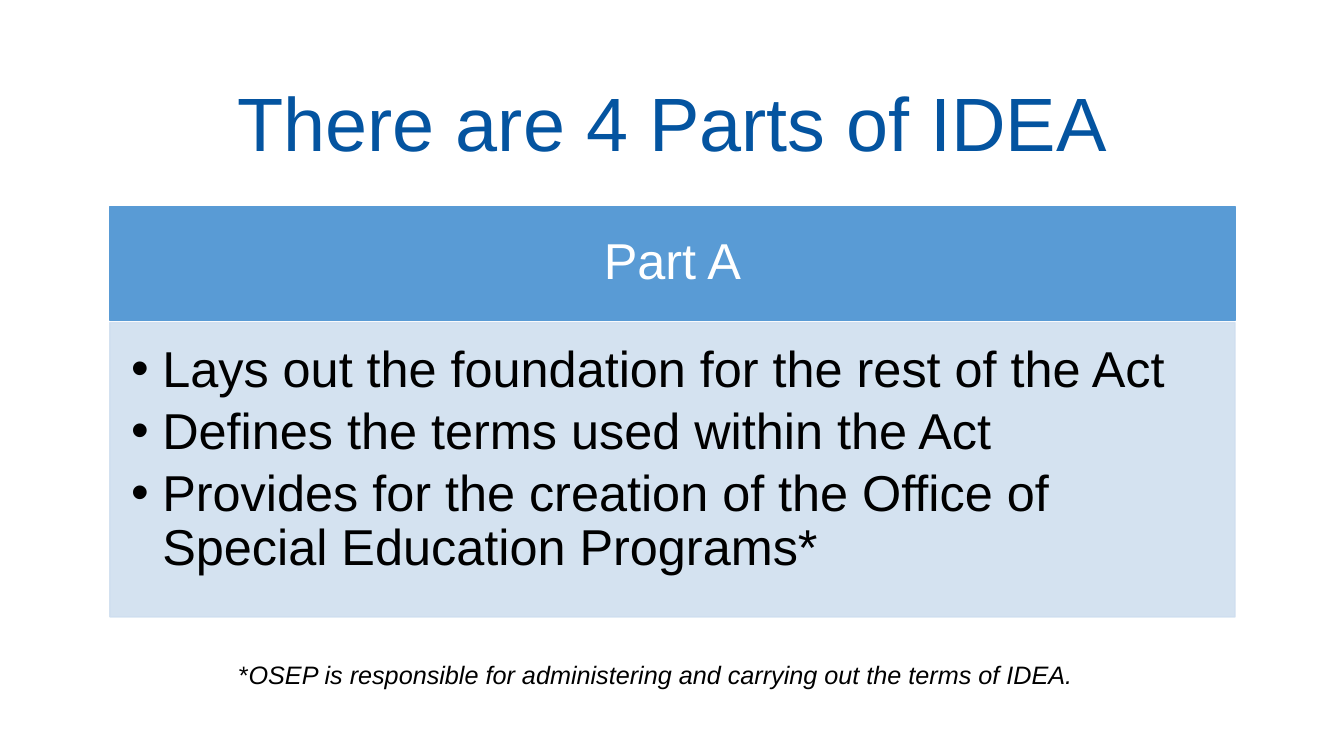
from lxml import etree
from pptx import Presentation
from pptx.dml.color import RGBColor
from pptx.enum import shapes, text
from pptx.oxml import ns
from pptx.util import Inches, Pt

TITLE_BLUE = RGBColor(0x04, 0x54, 0xA0)
HEADER_BLUE = RGBColor(0x59, 0x9B, 0xD5)
BODY_BLUE = RGBColor(0xCF, 0xDE, 0xEF)
WHITE = RGBColor(0xFF, 0xFF, 0xFF)
BLACK = RGBColor(0x00, 0x00, 0x00)

PANEL_LEFT, PANEL_WIDTH = 1.09, 11.16
DUTIES = [
    "Lays out the foundation for the rest of the Act",
    "Defines the terms used within the Act",
    "Provides for the creation of the Office of Special Education Programs*",
]


def style_run(r, size, color, italic=None):
    r.font.name = "Arial"
    r.font.size = Pt(size)
    r.font.color.rgb = color
    r.font.italic = italic


def set_frame(tf, anchor, insets=(0.1, 0.05, 0.1, 0.05)):
    tf.word_wrap = True
    tf.vertical_anchor = anchor
    tf.margin_left, tf.margin_top, tf.margin_right, tf.margin_bottom = map(Inches, insets)


def add_text(slide, left, top, width, height):
    box = slide.shapes.add_textbox(Inches(left), Inches(top), Inches(width), Inches(height))
    tf = box.text_frame
    set_frame(tf, text.MSO_ANCHOR.TOP)
    tf.auto_size = text.MSO_AUTO_SIZE.SHAPE_TO_FIT_TEXT
    return tf.paragraphs[0]


def add_panel(slide, top, height, color, anchor, insets, opacity=100):
    sp = slide.shapes.add_shape(
        shapes.MSO_SHAPE.RECTANGLE,
        Inches(PANEL_LEFT), Inches(top), Inches(PANEL_WIDTH), Inches(height),
    )
    sp.shadow.inherit = False
    sp.fill.solid()
    sp.fill.fore_color.rgb = color
    sp.line.color.rgb = color
    sp.line.width = Pt(1)
    if opacity < 100:
        for clr in sp.element.spPr.iter(ns.qn("a:srgbClr")):
            etree.SubElement(clr, ns.qn("a:alpha"), val=str(opacity * 1000))
    set_frame(sp.text_frame, anchor, insets)
    return sp.text_frame


def add_bullet(p):
    pPr = p._p.get_or_add_pPr()
    pPr.set("marL", str(Inches(0.31)))
    pPr.set("indent", str(-Inches(0.31)))
    etree.SubElement(pPr, ns.qn("a:buFont"), typeface="Arial")
    etree.SubElement(pPr, ns.qn("a:buChar"), char="•")


def add_title(slide):
    p = add_text(slide, 1.87, 0.7, 9.6, 1.01)
    p.text = "There are 4 Parts of IDEA"
    p.alignment = text.PP_ALIGN.CENTER
    style_run(p.runs[0], 54, TITLE_BLUE)


def add_header(slide):
    tf = add_panel(slide, 2.05, 1.13, HEADER_BLUE, text.MSO_ANCHOR.MIDDLE,
                   (0.28, 0.16, 0.28, 0.16))
    p = tf.paragraphs[0]
    p.text = "Part A"
    p.alignment = text.PP_ALIGN.CENTER
    p.line_spacing = 0.9
    style_run(p.runs[0], 36, WHITE)


def add_duties(slide):
    tf = add_panel(slide, 3.2, 2.92, BODY_BLUE, text.MSO_ANCHOR.TOP,
                   (0.21, 0.21, 0.28, 0.31), opacity=88)
    tf.text = "\n".join(DUTIES)
    for i, p in enumerate(tf.paragraphs):
        p.level = 1
        p.alignment = text.PP_ALIGN.LEFT
        p.line_spacing = 0.9
        p.space_before = Pt(5.4 if i else 0)
        add_bullet(p)
        style_run(p.runs[0], 36, BLACK)


def add_footnote(slide):
    p = add_text(slide, 2.27, 6.49, 8.54, 0.4)
    note = "OSEP is responsible for administering and carrying out the terms of IDEA."
    for words, italic in (("*", False), (note, True)):
        r = p.add_run()
        r.text = words
        style_run(r, 18, BLACK, italic)


def main():
    prs = Presentation()
    prs.slide_width = Inches(13.33)
    prs.slide_height = Inches(7.5)
    slide = prs.slides.add_slide(prs.slide_layouts[6])
    add_title(slide)
    add_header(slide)
    add_duties(slide)
    add_footnote(slide)
    prs.save("out.pptx")


if __name__ == "__main__":
    main()
